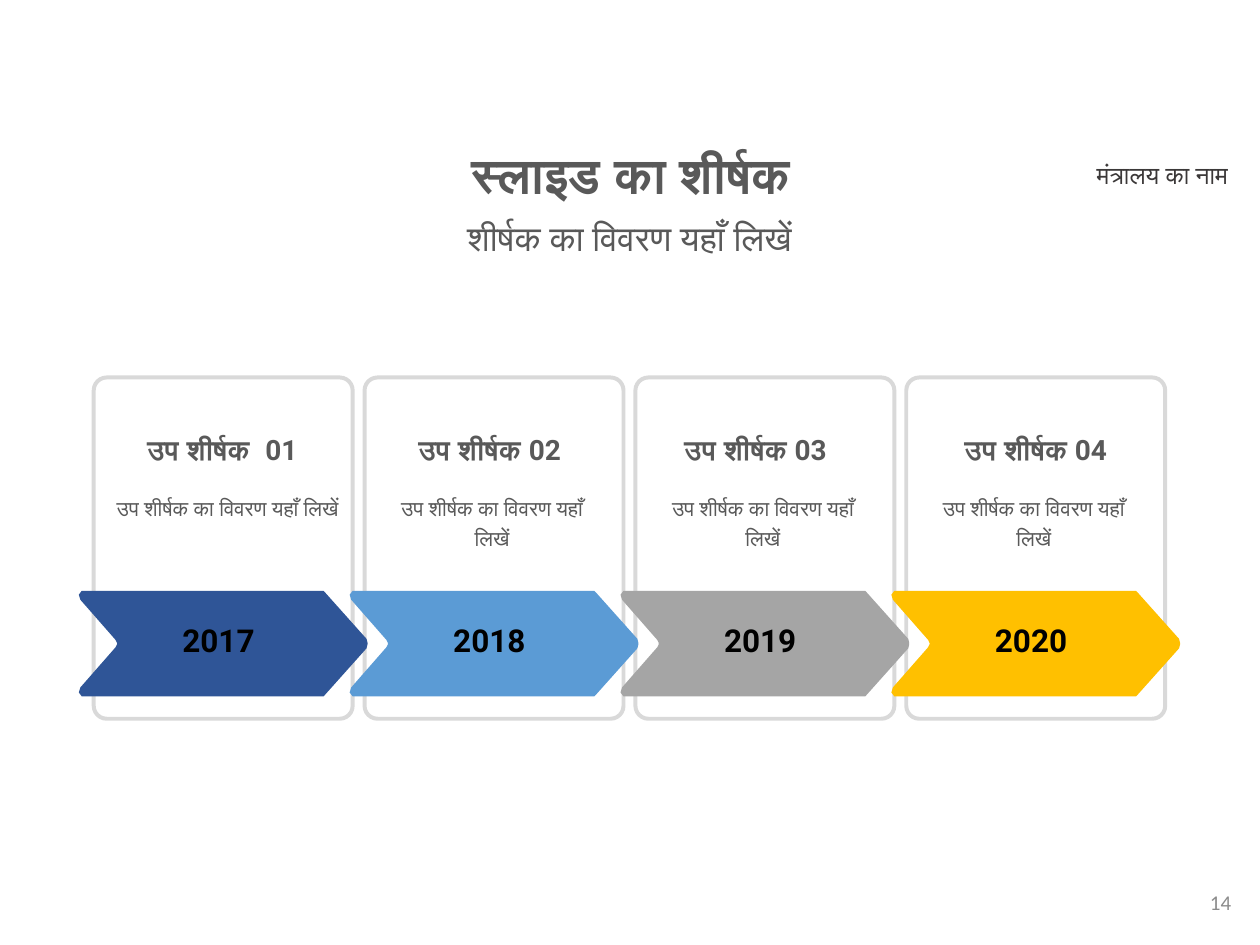
from collections import namedtuple

from pptx import Presentation
from pptx.dml.color import RGBColor
from pptx.enum.shapes import MSO_SHAPE
from pptx.enum.text import MSO_ANCHOR, MSO_AUTO_SIZE, PP_ALIGN
from pptx.util import Cm, Pt

ROUNDED = MSO_SHAPE.ROUNDED_RECTANGLE
TOP, MIDDLE, BOTTOM = MSO_ANCHOR.TOP, MSO_ANCHOR.MIDDLE, MSO_ANCHOR.BOTTOM
CENTER, RIGHT = PP_ALIGN.CENTER, PP_ALIGN.RIGHT
NO_AUTOSIZE = MSO_AUTO_SIZE.NONE

Box = namedtuple("Box", "left top width height")
Stage = namedtuple("Stage", "year color heading heading_x heading_width detail_x detail_width")

GRAY = "595959"
DETAIL = "उप शीर्षक का विवरण यहाँ लिखें"
STAGES = [
    Stage("2017", "2F5597", ("उप शीर्षक ", " 01"), 0.23, 4.8, 0.38, 4.72),
    Stage("2018", "5B9BD5", ("उप शीर्षक", " 02"), 0.25, 4.62, 0.36, 4.5),
    Stage("2019", "A5A5A5", ("उप शीर्षक ", "03"), 0.1, 4.72, 0.36, 4.5),
    Stage("2020", "FFC000", ("उप शीर्षक", " 04"), 0.25, 4.8, 0.36, 4.5),
]
STAGE_STEP = 5.46
ARROW_UPPER_EDGE = [
    (0.79, 1.05), (0.76, 0.99), (0.05, 0.18), (0.02, 0.08), (0.08, 0),
    (4.95, 0), (4.98, 0.03), (5.82, 0.97), (5.84, 1.05),
]
ARROW_HEIGHT = 2.1 + 0.03


def hex_color(value):
    return RGBColor.from_string(value)


def inside(box, left, top, width, height):
    return Box(box.left + left, box.top + top, width, height)


def place(shape, box):
    shape.left, shape.top = Cm(box.left), Cm(box.top)
    shape.width, shape.height = Cm(box.width), Cm(box.height)


def write(shape, *texts, size, fonts=("Calibri",), color=GRAY, bold=False,
          align=CENTER, anchor=TOP, spacing=1.0, margins=(0.25, 0.13)):
    frame = shape.text_frame
    frame.word_wrap = True
    frame.auto_size = NO_AUTOSIZE
    frame.vertical_anchor = anchor
    frame.margin_left = frame.margin_right = Cm(margins[0])
    frame.margin_top = frame.margin_bottom = Cm(margins[1])
    para = frame.paragraphs[0]
    para.alignment = align
    para.line_spacing = spacing
    para.space_before = Pt(0)
    for text, font in zip(texts, fonts):
        span = para.add_run()
        span.text = text
        span.font.name = font
        span.font.size = Pt(size)
        span.font.bold = bold
        span.font.color.rgb = hex_color(color)


def add_text(page, box, *texts, **style):
    shape = page.shapes.add_textbox(*(Cm(length) for length in box))
    write(shape, *texts, **style)


def add_header(page, box):
    title, subtitle = page.shapes.title, page.placeholders[1]
    place(title, inside(box, 1.02, 0, 15.98, 1.19))
    write(title, "स्लाइड का शीर्षक", size=28, bold=True, spacing=0.9)
    place(subtitle, inside(box, 0, 1.4, 17.96, 1.6))
    write(subtitle, "शीर्षक का विवरण यहाँ लिखें", size=20, spacing=0.9)
    add_text(page, inside(box, 17.65, 0.18, 4.14, 0.86), "मंत्रालय का नाम",
             size=14, color="3B3838")


def add_card(page, box, stage):
    line = 0.08
    frame = inside(box, line / 2, line / 2, box.width - line, box.height - line)
    card = page.shapes.add_shape(ROUNDED, *(Cm(length) for length in frame))
    card.adjustments[0] = 0.05
    card.shadow.inherit = False
    card.fill.background()
    card.line.color.rgb = hex_color("D9D9D9")
    card.line.width = Cm(line)
    add_text(page, inside(box, stage.heading_x, 1.02, stage.heading_width, 0.94),
             *stage.heading, size=16, fonts=("Calibri", "Roboto"), bold=True, anchor=BOTTOM)
    add_text(page, inside(box, stage.detail_x, 2.26, stage.detail_width, 1.3), DETAIL,
             size=12, fonts=("Open Sans",), spacing=1.2, margins=(0.1, 0.05))


def add_year_arrow(page, box, stage):
    left, top = box.left - 0.28, box.top + 4.34
    lower_edge = [(x, ARROW_HEIGHT - y) for x, y in reversed(ARROW_UPPER_EDGE)]
    points = [(Cm(left + x), Cm(top + y)) for x, y in ARROW_UPPER_EDGE + lower_edge]
    builder = page.shapes.build_freeform(*points[0])
    builder.add_line_segments(points[1:], close=True)
    arrow = builder.convert_to_shape()
    arrow.shadow.inherit = False
    arrow.fill.solid()
    arrow.fill.fore_color.rgb = hex_color(stage.color)
    arrow.line.fill.background()
    add_text(page, inside(box, 1.5, 4.83, 2.11, 1.02), stage.year, size=18,
             fonts=("Roboto",), color="000000", bold=True, anchor=MIDDLE)


def add_timeline(page, box):
    for add_part in (add_card, add_year_arrow):
        for index, stage in enumerate(STAGES):
            add_part(page, inside(box, index * STAGE_STEP, 0, 5.3, box.height), stage)


def main():
    deck = Presentation()
    deck.slide_width, deck.slide_height = Cm(25.4), Cm(19.05)
    page = deck.slides.add_slide(deck.slide_layouts[0])
    add_header(page, Box(3.71, 2.92, 21.79, 3))
    add_timeline(page, Box(1.85, 7.57, 21.68, 6.96))
    add_text(page, Box(19.35, 17.68, 5.72, 1.02), "14", size=12,
             color="8C8C8C", align=RIGHT, anchor=MIDDLE)
    deck.save("out.pptx")


if __name__ == "__main__":
    main()
